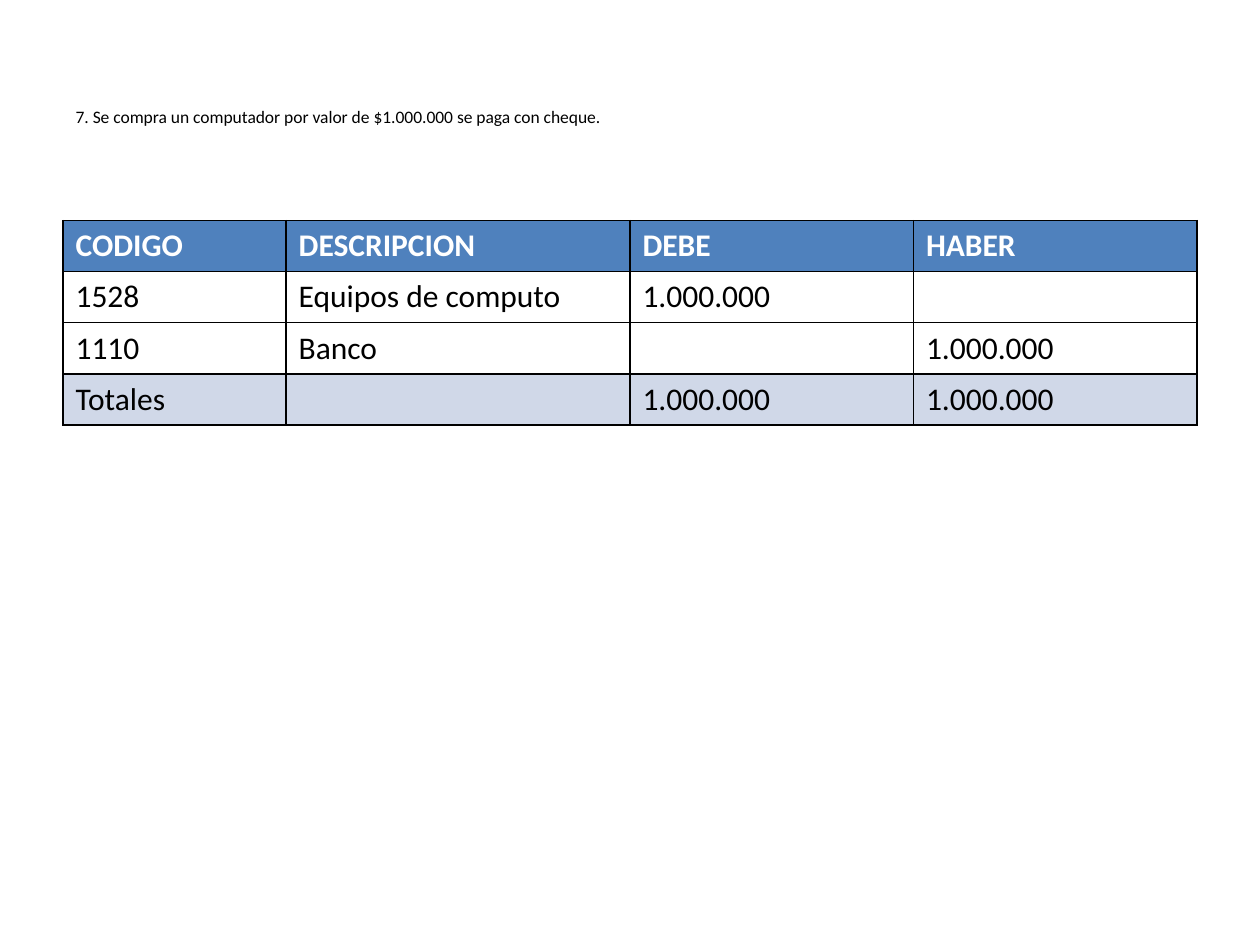
from lxml.etree import SubElement
from pptx import Presentation
from pptx.dml.color import RGBColor
from pptx.enum.text import MSO_ANCHOR as Anchor, PP_ALIGN as Align
from pptx.oxml.ns import qn
from pptx.util import Pt

STATEMENT = "7. Se compra un computador por valor de $1.000.000 se paga con cheque."
ENTRIES = [
    ("CODIGO", "DESCRIPCION", "DEBE", "HABER"),
    ("1528", "Equipos de computo", "1.000.000", ""),
    ("1110", "Banco", "", "1.000.000"),
    ("Totales", "", "1.000.000", "1.000.000"),
]
COLUMN_WIDTHS = (127.5, 196.5, 162, 162)
ROW_HEIGHT = 29.2
MARGIN = 36
TITLE_TOP, TITLE_HEIGHT = 21.6, 90
TABLE_TOP = 126

THEME = {
    "font": "Calibri",
    "statement_size": 10,
    "table_size": 18,
    "ink": "000000",
    "header_ink": "FFFFFF",
    "header_fill": "4F81BD",
    "totals_fill": "D0D8E8",
    "border": "000000",
    "border_width": 1,
}


def write(frame, text, size, color, bold=False, align=Align.LEFT):
    paragraph = frame.paragraphs[0]
    paragraph.alignment = align
    paragraph.font.size = Pt(size)
    if not text:
        return
    run = paragraph.add_run()
    run.text = text
    run.font.name = THEME["font"]
    run.font.size = Pt(size)
    run.font.bold = bold
    run.font.color.rgb = RGBColor.from_string(color)


def add_borders(cell):
    """Outline all four sides; call before the fill, which must follow in the XML."""
    properties = cell._tc.get_or_add_tcPr()
    for side in ("a:lnL", "a:lnR", "a:lnT", "a:lnB"):
        line = SubElement(properties, qn(side), w=str(Pt(THEME["border_width"])))
        fill = SubElement(line, qn("a:solidFill"))
        SubElement(fill, qn("a:srgbClr"), val=THEME["border"])


def add_statement(slide):
    title = slide.shapes.title
    title.left, title.top = Pt(MARGIN), Pt(TITLE_TOP)
    title.width, title.height = Pt(sum(COLUMN_WIDTHS)), Pt(TITLE_HEIGHT)
    title.text_frame.word_wrap = True
    title.text_frame.vertical_anchor = Anchor.MIDDLE
    write(title.text_frame, STATEMENT, THEME["statement_size"], THEME["ink"],
          align=Align.JUSTIFY)


def add_journal(slide):
    last = len(ENTRIES) - 1
    row_fills = {0: THEME["header_fill"], last: THEME["totals_fill"]}
    journal = slide.shapes.add_table(
        len(ENTRIES), len(COLUMN_WIDTHS), Pt(MARGIN), Pt(TABLE_TOP),
        Pt(sum(COLUMN_WIDTHS)), Pt(ROW_HEIGHT * len(ENTRIES))).table
    journal.horz_banding = False
    for column, width in zip(journal.columns, COLUMN_WIDTHS):
        column.width = Pt(width)
    for index, entry in enumerate(ENTRIES):
        journal.rows[index].height = Pt(ROW_HEIGHT)
        is_header = index == 0
        ink = THEME["header_ink" if is_header else "ink"]
        for cell, text in zip(journal.rows[index].cells, entry):
            write(cell.text_frame, text, THEME["table_size"], ink, bold=is_header)
            add_borders(cell)
            if index in row_fills:
                cell.fill.solid()
                cell.fill.fore_color.rgb = RGBColor.from_string(row_fills[index])
            else:
                cell.fill.background()


def main():
    deck = Presentation()
    deck.slide_width, deck.slide_height = Pt(720), Pt(540)
    slide = deck.slides.add_slide(deck.slide_layouts[5])
    add_statement(slide)
    add_journal(slide)
    deck.save("out.pptx")


if __name__ == "__main__":
    main()
